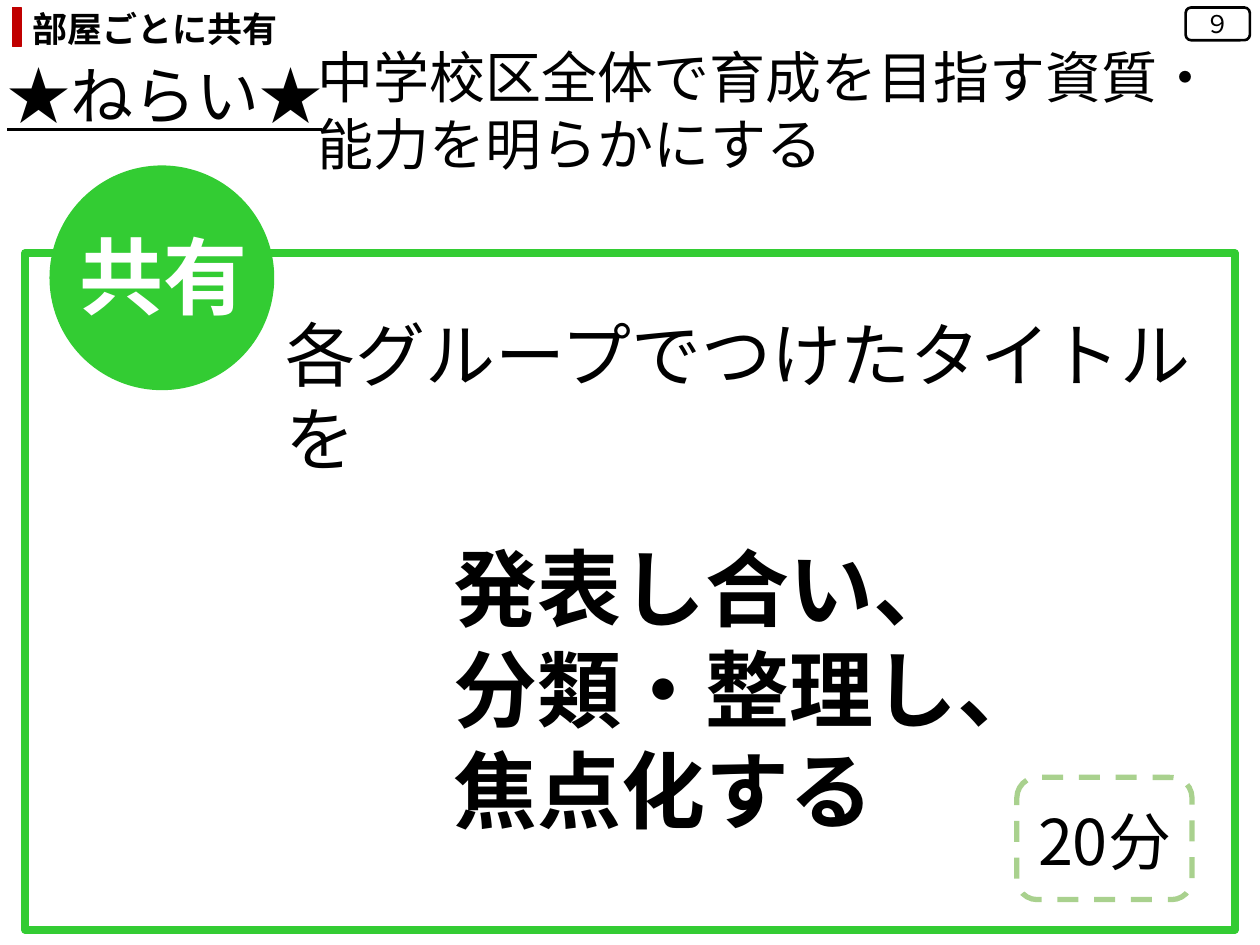
from lxml.etree import SubElement
from pptx import Presentation
from pptx.dml.color import RGBColor
from pptx.enum.dml import MSO_LINE
from pptx.enum.shapes import MSO_SHAPE
from pptx.enum.text import MSO_ANCHOR, PP_ALIGN
from pptx.oxml.ns import qn
from pptx.util import Inches, Pt

GREEN = "33CC33"
LIGHT_GREEN = "A9D18E"
RED = "C00000"
BLACK = "000000"
WHITE = "FFFFFF"


def color(code):
    return RGBColor.from_string(code)


class SlideBuilder:
    font_name = "Noto Sans CJK JP"

    def __init__(self, slide):
        self.slide = slide

    def shape(self, kind, left, top, width, height, line, line_width=1, fill=None, dash=None):
        shape = self.slide.shapes.add_shape(
            kind, Inches(left), Inches(top), Inches(width), Inches(height))
        shape.shadow.inherit = False
        if fill:
            shape.fill.solid()
            shape.fill.fore_color.rgb = color(fill)
        else:
            shape.fill.background()
        shape.line.color.rgb = color(line)
        shape.line.width = Pt(line_width)
        if dash:
            shape.line.dash_style = dash
        return shape

    def text_box(self, left, top, width, height):
        box = self.slide.shapes.add_textbox(
            Inches(left), Inches(top), Inches(width), Inches(height))
        box.text_frame.word_wrap = True
        return box.text_frame

    def add_text(self, frame, text, size, ink=BLACK, bold=False, underline=False,
                 align=PP_ALIGN.LEFT, before=0, spacing=None, indent=0):
        """Fill the frame's empty first paragraph, or append a new one."""
        para = frame.paragraphs[0]
        if para.runs:
            para = frame.add_paragraph()
        para.alignment = align
        para.space_before = Pt(before)
        if spacing:
            para.line_spacing = spacing
        if indent:
            properties = para._p.get_or_add_pPr()
            properties.set("marL", str(Pt(indent)))
            properties.set("indent", "0")
        span = para.add_run()
        span.text = text
        font = span.font
        font.name = self.font_name
        font.size = Pt(size)
        font.bold = bold
        font.underline = underline
        font.color.rgb = color(ink)
        SubElement(span._r.get_or_add_rPr(), qn("a:ea"), typeface=self.font_name)


def main():
    deck = Presentation()
    deck.slide_width = Inches(10)
    deck.slide_height = Inches(7.5)
    page = SlideBuilder(deck.slides.add_slide(deck.slide_layouts[6]))

    page.shape(MSO_SHAPE.RECTANGLE, 0.2, 2.01, 9.6, 5.37, GREEN, 4.5)

    page.shape(MSO_SHAPE.ROUNDED_RECTANGLE, 8.07, 6.17, 1.39, 0.97,
               LIGHT_GREEN, 3, dash=MSO_LINE.DASH)
    page.add_text(page.text_box(8.14, 6.32, 1.42, 0.71), "20分", 36)

    task = page.text_box(2.17, 2.42, 7.83, 3.8)
    page.add_text(task, "各グループでつけたタイトルを", 40)
    steps = ["発表し合い、", "分類・整理し、", "焦点化する"]
    for number, step in enumerate(steps):
        page.add_text(task, step, 48, bold=True, indent=96, before=0 if number else 33)

    page.add_text(page.text_box(-0.04, 0.47, 9.78, 1.42), "★ねらい★", 36,
                  underline=True, before=10, spacing=0.9)

    page.shape(MSO_SHAPE.OVAL, 0.4, 1.32, 1.77, 1.77, GREEN, fill=GREEN)
    page.add_text(page.text_box(0.32, 1.73, 1.95, 0.91), "共有", 48, WHITE,
                  bold=True, align=PP_ALIGN.CENTER)

    page.add_text(page.text_box(0.16, 0.01, 2.41, 0.44), "部屋ごとに共有", 20, bold=True)
    page.shape(MSO_SHAPE.RECTANGLE, 0.1, 0.06, 0.07, 0.31, RED, fill=RED)
    badge = page.shape(MSO_SHAPE.ROUNDED_RECTANGLE, 9.41, 0.06, 0.51, 0.26,
                       BLACK, 1.5, fill=WHITE)
    badge.text_frame.vertical_anchor = MSO_ANCHOR.MIDDLE
    page.add_text(badge.text_frame, "９", 14, align=PP_ALIGN.CENTER)

    page.add_text(page.text_box(2.42, 0.29, 7.42, 1.18),
                  "中学校区全体で育成を目指す資質・能力を明らかにする", 32)

    deck.save("out.pptx")


if __name__ == "__main__":
    main()
